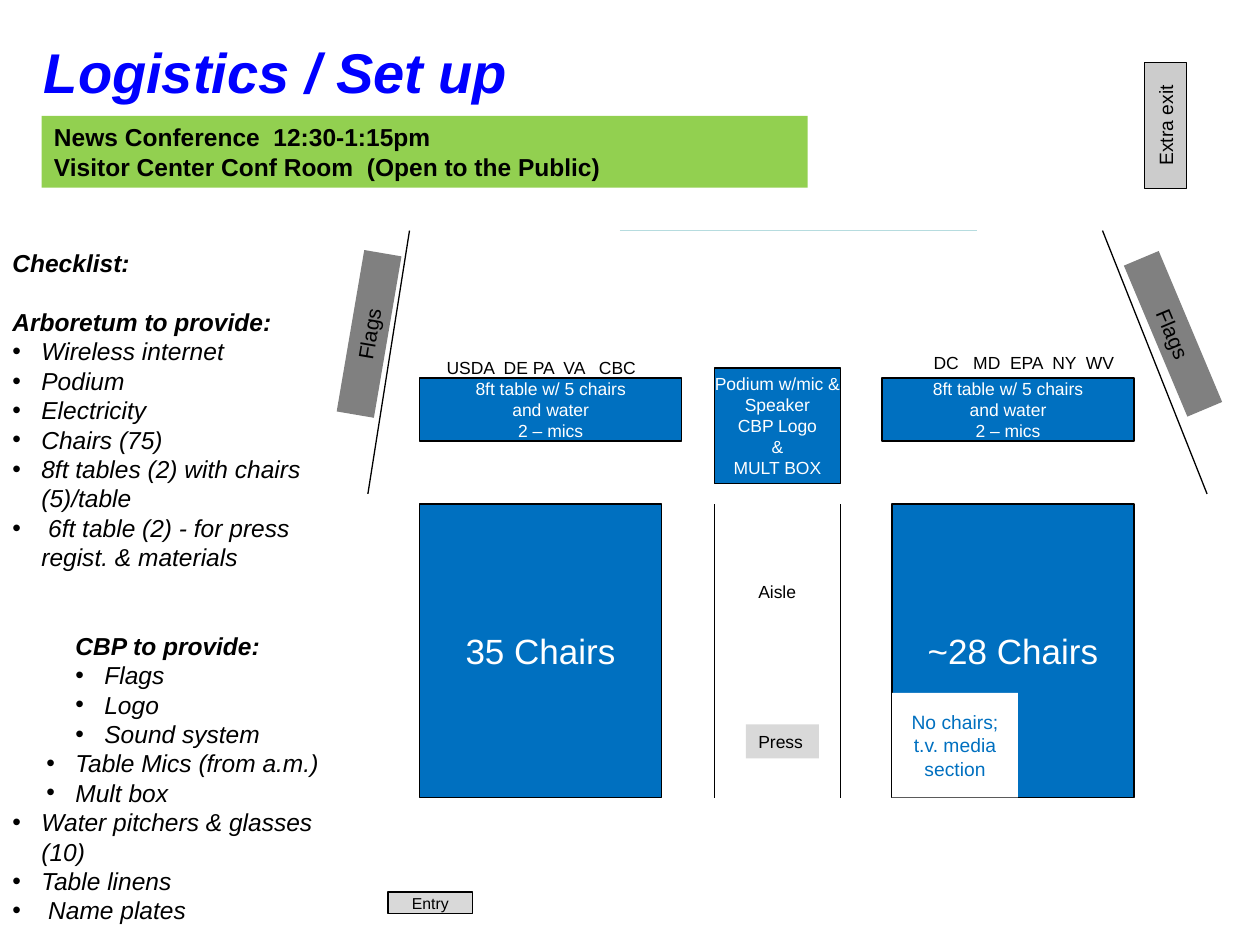
import pptx
import pptx.dml.color
import pptx.enum.shapes
import pptx.enum.text
import pptx.oxml.ns
import pptx.util
from lxml import etree

Inches = pptx.util.Inches
Pt = pptx.util.Pt
RGBColor = pptx.dml.color.RGBColor
ALIGN = pptx.enum.text.PP_ALIGN
ANCHOR = pptx.enum.text.MSO_ANCHOR
qn = pptx.oxml.ns.qn

BLACK = RGBColor(0x00, 0x00, 0x00)
WHITE = RGBColor(0xFF, 0xFF, 0xFF)
TITLE_BLUE = RGBColor(0x00, 0x00, 0xFF)
SEAT_BLUE = RGBColor(0x00, 0x70, 0xC0)
GREEN = RGBColor(0x92, 0xD0, 0x50)
FLAG_GRAY = RGBColor(0x80, 0x80, 0x80)
EXIT_GRAY = RGBColor(0xCC, 0xCC, 0xCC)
LIGHT_GRAY = RGBColor(0xD9, 0xD9, 0xD9)
SCREEN_TEAL = RGBColor(0xB6, 0xDC, 0xDF)

LINE_GAP = 16.85
HANG = 0.23
HEADING = {"bold": True}
CENTERED = {"align": ALIGN.CENTER, "anchor": ANCHOR.MIDDLE, "wrap": False}
SEATING = {**CENTERED, "fill": SEAT_BLUE, "outline": BLACK, "color": WHITE}

# Text, left margin in inches, bulleted, lines of space before
CHECKLIST = [
    ("Checklist:", 0, False, 0),
    ("Arboretum to provide:", 0, False, 1),
    ("Wireless internet", HANG, True, 0),
    ("Podium", HANG, True, 0),
    ("Electricity", HANG, True, 0),
    ("Chairs (75)", HANG, True, 0),
    ("8ft tables (2) with chairs (5)/table", HANG, True, 0),
    (" 6ft table (2) - for press regist. & materials", HANG, True, 0),
    ("CBP to provide:", 0.5, False, 2),
    ("Flags", 0.5 + HANG, True, 0),
    ("Logo", 0.5 + HANG, True, 0),
    ("Sound system", 0.5 + HANG, True, 0),
    ("Table Mics (from a.m.)", 0.5, True, 0),
    ("Mult box", 0.5, True, 0),
    ("Water pitchers & glasses (10)", HANG, True, 0),
    ("Table linens", HANG, True, 0),
    (" Name plates", HANG, True, 0),
]


class FloorPlan:
    def __init__(self, slide, font="Arial"):
        self.slide = slide
        self.font = font

    def add_span(self, para, text, size, color, **formats):
        span = para.add_run()
        span.text = text
        span.font.color.rgb = color
        for name, value in {"name": self.font, "size": Pt(size), **formats}.items():
            setattr(span.font, name, value)

    def fill_text(self, box, lines, size, color=BLACK, align=ALIGN.LEFT,
                  anchor=ANCHOR.TOP, wrap=True, **formats):
        frame = box.text_frame
        frame.word_wrap = wrap
        frame.vertical_anchor = anchor
        for index, line in enumerate(lines):
            para = frame.add_paragraph() if index else frame.paragraphs[0]
            para.alignment = align
            self.add_span(para, line, size, color, **formats)

    def text(self, place, lines, size, **formats):
        box = self.slide.shapes.add_textbox(*map(Inches, place))
        self.fill_text(box, lines, size, **formats)

    def block(self, place, lines, size, fill, outline=None, turn=0, **formats):
        box = self.slide.shapes.add_shape(
            pptx.enum.shapes.MSO_SHAPE.RECTANGLE, *map(Inches, place))
        box.shadow.inherit = False
        box.rotation = turn
        box.fill.solid()
        box.fill.fore_color.rgb = fill
        if outline is None:
            box.line.fill.background()
        else:
            box.line.color.rgb = outline
            box.line.width = Pt(0.75)
        self.fill_text(box, lines, size, **formats)

    def line(self, ends, color=BLACK):
        """Draw a straight line; ends is x1, y1, x2, y2."""
        wall = self.slide.shapes.add_connector(
            pptx.enum.shapes.MSO_CONNECTOR.STRAIGHT, *map(Inches, ends))
        wall.line.color.rgb = color
        wall.line.width = Pt(0.75)
        etree.SubElement(wall._element.spPr, qn("a:effectLst"))

    def checklist(self, place, items, size):
        box = self.slide.shapes.add_textbox(*map(Inches, place))
        frame = box.text_frame
        frame.word_wrap = True
        for index, (text, margin, bulleted, gap) in enumerate(items):
            para = frame.add_paragraph() if index else frame.paragraphs[0]
            para.space_before = Pt(gap * LINE_GAP)
            self.add_span(para, text, size, BLACK, bold=not bulleted, italic=True)
            settings = para._p.get_or_add_pPr()
            settings.set("marL", str(Inches(margin)))
            settings.set("indent", str(Inches(-HANG if bulleted else 0)))
            if bulleted:
                etree.SubElement(settings, qn("a:buFont"), typeface=self.font)
                etree.SubElement(settings, qn("a:buChar"), char="•")


def main():
    deck = pptx.Presentation()
    deck.slide_width, deck.slide_height = Inches(10), Inches(7.5)
    plan = FloorPlan(deck.slides.add_slide(deck.slide_layouts[6]))

    plan.block((0.33, 0.92, 6.08, 0.57),
               ["News Conference  12:30-1:15pm",
                "Visitor Center Conf Room  (Open to the Public)"],
               14, GREEN, **HEADING)
    plan.text((0.25, 0.25, 9.33, 0.63), ["Logistics / Set up"], 32,
              color=TITLE_BLUE, italic=True, **HEADING)

    table_lines = ["8ft table w/ 5 chairs", "and water", "2 – mics"]
    for left, width in ((3.33, 2.08), (7, 2)):
        plan.block((left, 3, width, 0.5), table_lines, 10, **SEATING)
    plan.block((5.67, 2.92, 1, 0.92),
               ["Podium w/mic &", "Speaker", "CBP Logo", "&", "MULT BOX"],
               10, **SEATING)

    for bottom, top in ((2.92, 3.25), (9.58, 8.75)):
        plan.line((bottom, 3.92, top, 1.83))
    for left, turn in ((8.66, 67.2), (2.28, 279.7)):
        plan.block((left, 2.5, 1.3, 0.3), ["Flags"], 12, FLAG_GRAY,
                   turn=turn, align=ALIGN.CENTER)

    for aisle_side in (5.67, 6.67):
        plan.line((aisle_side, 4, aisle_side, 6.33))
    plan.text((5.92, 4.56, 0.5, 0.27), ["Aisle"], 10)
    plan.block((5.92, 5.75, 0.58, 0.27), ["Press"], 10, LIGHT_GRAY)

    for left, label in ((3.33, "35 Chairs"), (7.08, "~28 Chairs")):
        plan.block((left, 4, 1.92, 2.33), [label], 20, **SEATING)
    plan.block((7.08, 5.5, 1, 0.83), ["No chairs; t.v. media section"], 11, WHITE,
               color=SEAT_BLUE, align=ALIGN.CENTER, anchor=ANCHOR.MIDDLE)

    plan.checklist((0, 1.92, 2.92, 6.36), CHECKLIST, 14)
    plan.text((3.17, 2.75, 2.25, 0.33), ["USDA  DE PA  VA   CBC"], 10, **CENTERED)
    plan.text((7, 2.75, 2.25, 0.25), ["DC   MD  EPA  NY  WV"], 10, **CENTERED)

    plan.block((8.75, 0.83, 1, 0.33), ["Extra exit"], 11, EXIT_GRAY, BLACK,
               turn=270, **CENTERED)
    plan.block((3.08, 7.08, 0.67, 0.17), ["Entry"], 9, LIGHT_GRAY, BLACK, **CENTERED)
    plan.line((4.92, 1.83, 7.75, 1.83), SCREEN_TEAL)

    deck.save("out.pptx")


if __name__ == "__main__":
    main()
